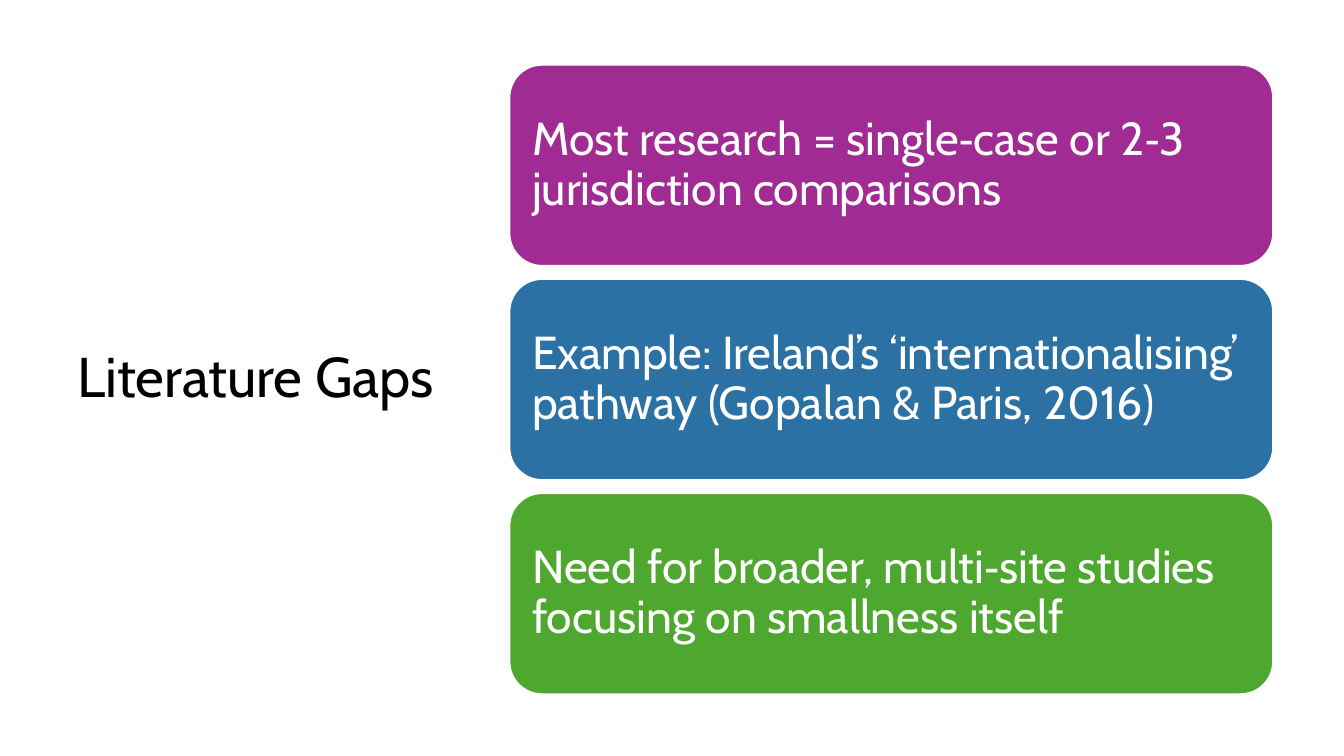
from dataclasses import dataclass

from pptx import Presentation
from pptx.dml.color import RGBColor
from pptx.enum.shapes import MSO_SHAPE
from pptx.enum.text import MSO_ANCHOR, PP_ALIGN
from pptx.util import Inches, Pt


@dataclass(frozen=True)
class Theme:
    font: str = "Cabin"
    title_size: int = 40
    card_size: int = 33
    black: str = "000000"
    white: str = "FFFFFF"
    purple: str = "A02B93"
    blue: str = "2C71A4"
    green: str = "4EA72E"
    outline: float = 3.15
    line_spacing: float = 0.9


THEME = Theme()

# Card column: equal rows at a fixed pitch
CARD_LEFT, CARD_TOP = 5.04, 0.63
CARD_WIDTH, CARD_HEIGHT = 7.6, 2.02
CARD_PITCH = 2.125

GAPS = [
    (THEME.purple, "Most research = single‑case or 2‑3 jurisdiction comparisons"),
    (THEME.blue, "Example: Ireland’s ‘internationalising’ pathway (Gopalan & Paris, 2016)"),
    (THEME.green, "Need for broader, multi‑site studies focusing on smallness itself"),
]


def write_text(sp, text, size, color, inset_x, inset_y):
    tf = sp.text_frame
    tf.word_wrap = True
    tf.vertical_anchor = MSO_ANCHOR.MIDDLE
    tf.margin_left = tf.margin_right = Inches(inset_x)
    tf.margin_top = tf.margin_bottom = Inches(inset_y)
    p = tf.paragraphs[0]
    p.alignment = PP_ALIGN.LEFT
    p.line_spacing = THEME.line_spacing
    r = p.add_run()
    r.text = text
    r.font.name = THEME.font
    r.font.size = Pt(size)
    r.font.color.rgb = RGBColor.from_string(color)


def add_title(s, text):
    sp = s.shapes.add_textbox(Inches(0.67), Inches(0.6), Inches(3.82), Inches(6.33))
    write_text(sp, text, THEME.title_size, THEME.black, 0.1, 0.05)


def add_card(s, row, fill, text):
    sp = s.shapes.add_shape(
        MSO_SHAPE.ROUNDED_RECTANGLE,
        Inches(CARD_LEFT), Inches(CARD_TOP + row * CARD_PITCH),
        Inches(CARD_WIDTH), Inches(CARD_HEIGHT),
    )
    sp.shadow.inherit = False
    sp.fill.solid()
    sp.fill.fore_color.rgb = RGBColor.from_string(fill)
    sp.line.color.rgb = RGBColor.from_string(THEME.white)
    sp.line.width = Pt(THEME.outline)
    write_text(sp, text, THEME.card_size, THEME.white, 0.14, 0.14)


def main():
    prs = Presentation()
    prs.slide_width, prs.slide_height = Inches(13.33), Inches(7.5)
    s = prs.slides.add_slide(prs.slide_layouts[6])

    # Title on the left
    add_title(s, "Literature Gaps")

    # Stacked cards on the right
    for row, (fill, text) in enumerate(GAPS):
        add_card(s, row, fill, text)

    prs.save("out.pptx")


if __name__ == "__main__":
    main()
